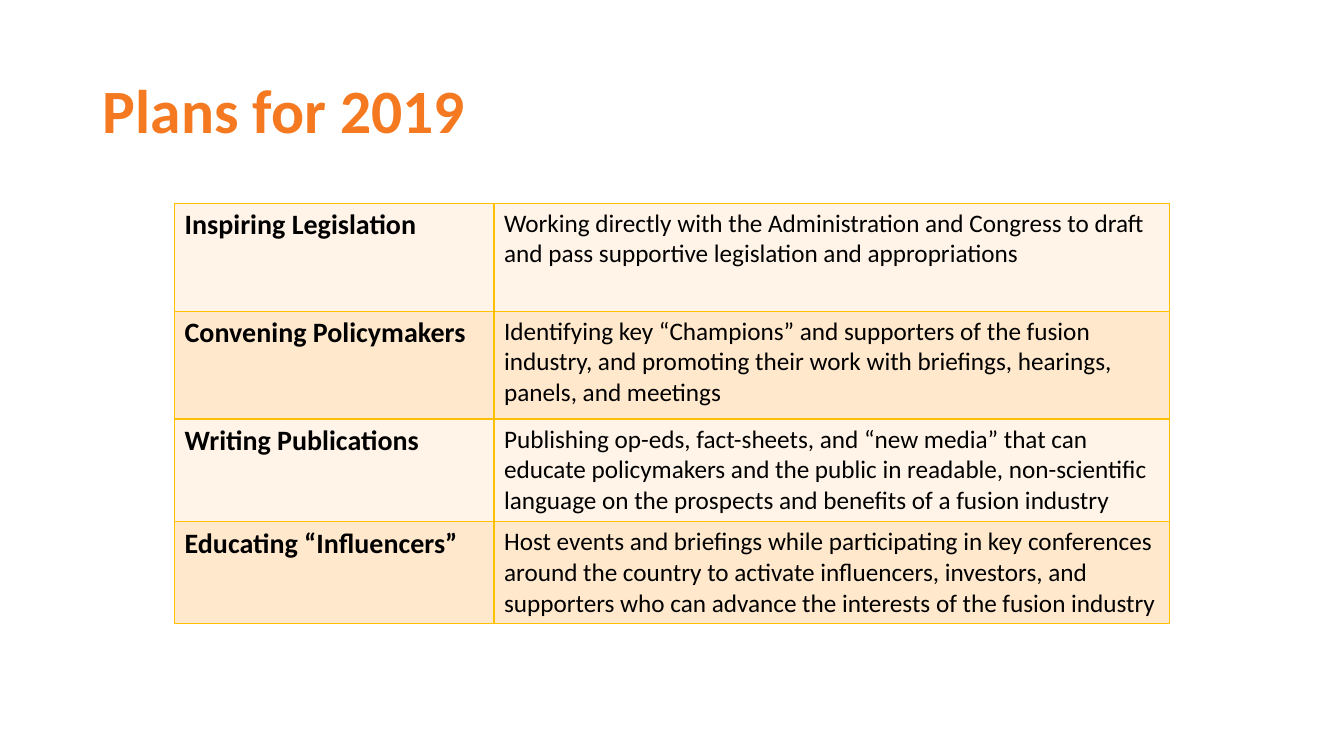
from pptx import Presentation
from pptx.dml.color import RGBColor
from pptx.enum.text import MSO_ANCHOR, PP_ALIGN
from pptx.oxml import parse_xml
from pptx.oxml.ns import nsdecls
from pptx.util import Cm, Pt

LEFT = PP_ALIGN.LEFT
MIDDLE = MSO_ANCHOR.MIDDLE
TOP = MSO_ANCHOR.TOP
ORANGE = RGBColor(0xF4, 0x79, 0x20)
BLACK = RGBColor(0x00, 0x00, 0x00)
GOLD = RGBColor(0xFF, 0xC0, 0x00)
BANDS = (RGBColor(0xFF, 0xF4, 0xE7), RGBColor(0xFF, 0xE8, 0xCC))
FONT = "Calibri"
COLS = (8.05, 17.02)
ROWS = (2.72, 2.72, 2.57, 2.57)
PLANS = (
    ("Inspiring Legislation",
     "Working directly with the Administration and Congress to draft and pass "
     "supportive legislation and appropriations"),
    ("Convening Policymakers",
     "Identifying key “Champions” and supporters of the fusion industry, and "
     "promoting their work with briefings, hearings, panels, and meetings"),
    ("Writing Publications",
     "Publishing op-eds, fact-sheets, and “new media” that can educate "
     "policymakers and the public in readable, non-scientific language on the "
     "prospects and benefits of a fusion industry"),
    ("Educating “Influencers”",
     "Host events and briefings while participating in key conferences around "
     "the country to activate influencers, investors, and supporters who can "
     "advance the interests of the fusion industry"),
)


def write(frame, text, size, color=BLACK, bold=False, anchor=TOP, space=1.0):
    frame.word_wrap = True
    frame.vertical_anchor = anchor
    para = frame.paragraphs[0]
    para.alignment = LEFT
    para.line_spacing = space
    run = para.add_run()
    run.text = text
    font = run.font
    font.name = FONT
    font.size = Pt(size)
    font.bold = bold
    font.color.rgb = color


def border(cell):
    props = cell._tc.get_or_add_tcPr()
    for spot, side in enumerate(("lnL", "lnR", "lnT", "lnB")):
        props.insert(spot, parse_xml(
            f'<a:{side} {nsdecls("a")} w="{Pt(1)}"><a:solidFill>'
            f'<a:srgbClr val="{GOLD}"/></a:solidFill></a:{side}>'))


def add_title(slide, left, top, width, height):
    title = slide.shapes.title
    title.left, title.top = Cm(left), Cm(top)
    title.width, title.height = Cm(width), Cm(height)
    write(title.text_frame, "Plans for 2019", 44, color=ORANGE, bold=True,
          anchor=MIDDLE, space=0.9)


def add_plans(slide, left, top, width, height):
    table = slide.shapes.add_table(
        len(ROWS), len(COLS), Cm(left), Cm(top), Cm(width), Cm(height)).table
    table.first_row = False
    for col, size in zip(table.columns, COLS):
        col.width = Cm(size * width / sum(COLS))
    for index, (row, size) in enumerate(zip(table.rows, ROWS)):
        row.height = Cm(size * height / sum(ROWS))
        for part, cell in enumerate(row.cells):
            head = part == 0
            cell.fill.solid()
            cell.fill.fore_color.rgb = BANDS[index % 2]
            border(cell)
            write(cell.text_frame, PLANS[index][part], 20 if head else 18,
                  bold=head)


def main():
    deck = Presentation()
    deck.slide_width, deck.slide_height = Cm(33.87), Cm(19.05)
    slide = deck.slides.add_slide(deck.slide_layouts[5])
    add_title(slide, 2.34, 1.02, 29.21, 3.68)
    add_plans(slide, 4.4, 5.12, sum(COLS), sum(ROWS))
    deck.save("out.pptx")


if __name__ == "__main__":
    main()
